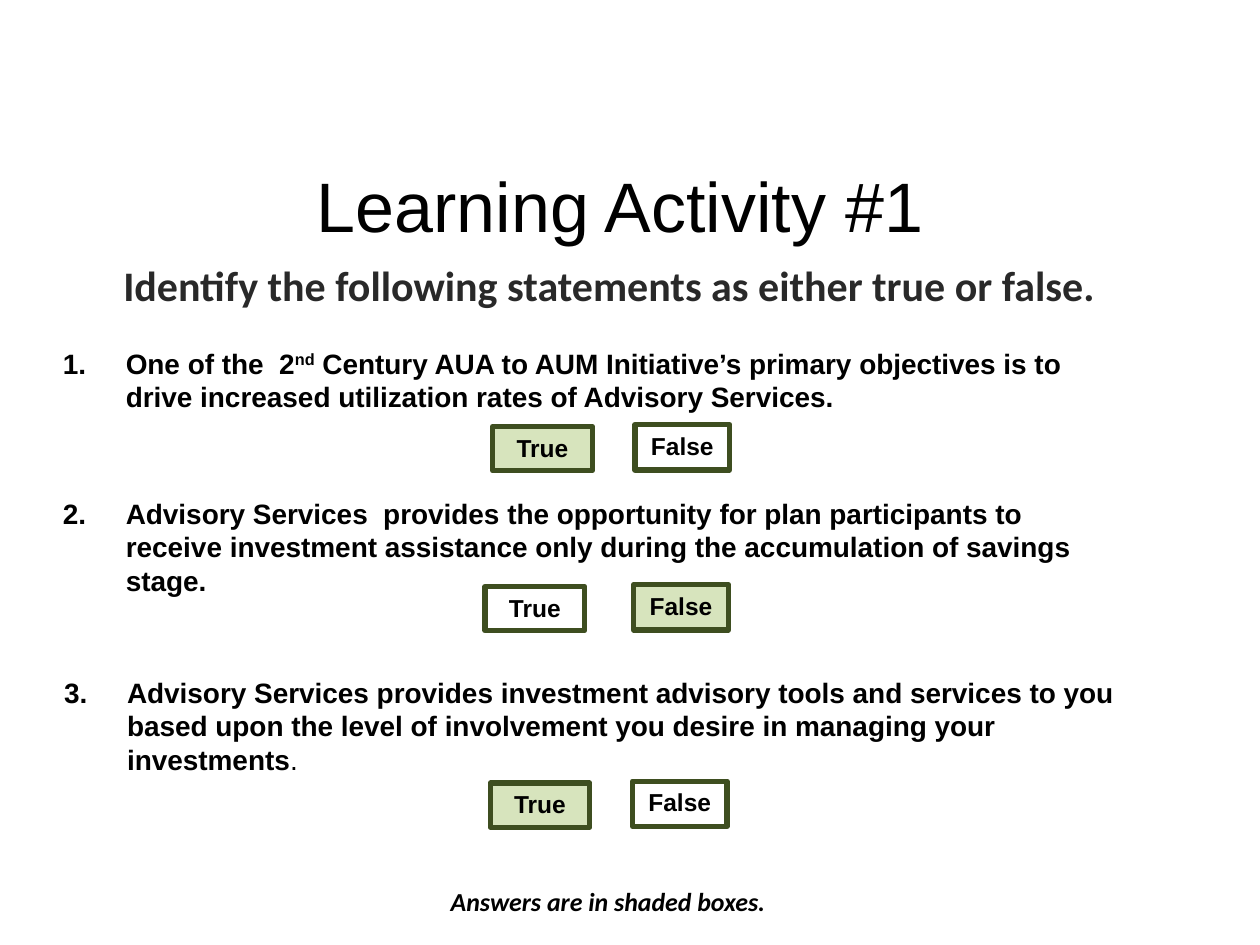
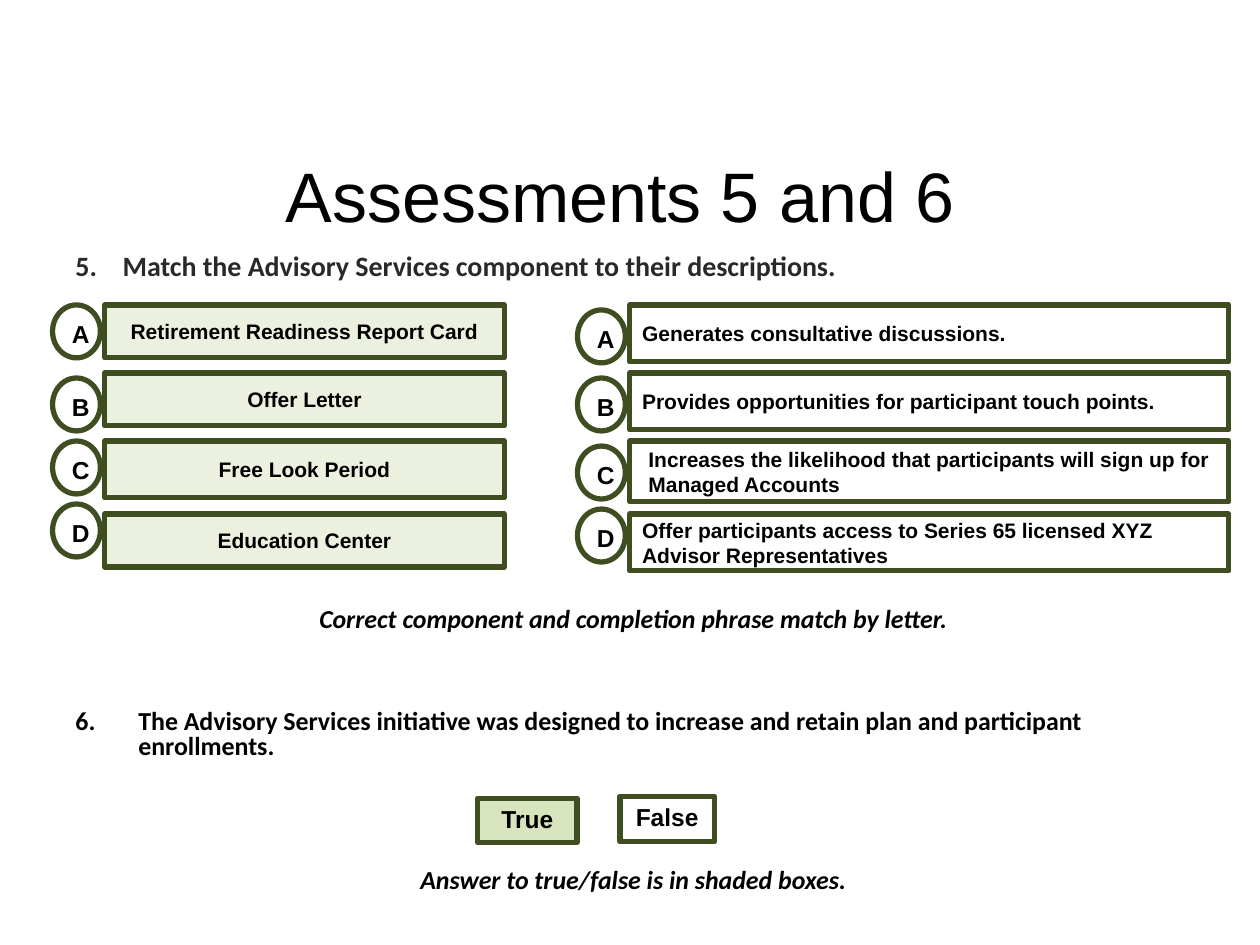
from dataclasses import dataclass

from lxml.etree import SubElement
from pptx import Presentation
from pptx.dml.color import RGBColor
from pptx.enum.shapes import MSO_SHAPE as Preset
from pptx.enum.text import MSO_ANCHOR as Anchor, PP_ALIGN as Align
from pptx.oxml.ns import qn
from pptx.util import Inches, Pt

COLUMNS, ROWS = 100, 75
WIDTH, HEIGHT = Inches(10), Inches(7.5)
COLUMN, ROW = WIDTH // COLUMNS, HEIGHT // ROWS

BLACK = RGBColor(0x00, 0x00, 0x00)
CHARCOAL = RGBColor(0x29, 0x29, 0x29)
OLIVE = RGBColor(0x3E, 0x4E, 0x20)
ANSWER_GREEN = RGBColor(0xD7, 0xE4, 0xBD)
COMPONENT_GREEN = RGBColor(0xEB, 0xF1, 0xDE)

BODY_WIDTH = 85.5
HANGING = 5
MATCH_ROWS = ((0, 4.2), (5.4, 4.2), (10.8, 4.5), (16.6, 4.2))
COMPONENTS = (
    "Retirement Readiness Report Card",
    "Offer Letter",
    "Free Look Period",
    "Education Center",
)
DESCRIPTIONS = (
    "Generates consultative discussions.",
    "Provides opportunities for participant touch points.",
    "Increases the likelihood that participants will sign up for Managed Accounts",
    "Offer participants access to Series 65 licensed XYZ Advisor Representatives",
)


@dataclass
class Box:
    left: float
    top: float
    width: float
    height: float

    def inner(self, left, top, width, height):
        return Box(self.left + left, self.top + top, width, height)

    def lengths(self):
        return (round(self.left * COLUMN), round(self.top * ROW),
                round(self.width * COLUMN), round(self.height * ROW))


def write(shape, text, size=14, font="Arial", color=BLACK, bold=True, italic=False,
          align=Align.LEFT, anchor=Anchor.TOP, hanging=0, indent=0, number=None,
          line_spacing=None):
    frame = shape.text_frame
    frame.word_wrap = True
    frame.vertical_anchor = anchor
    paragraph = frame.paragraphs[0]
    paragraph.alignment = align
    if line_spacing:
        paragraph.line_spacing = line_spacing
    properties = paragraph._p.get_or_add_pPr()
    if hanging or indent:
        properties.set("marL", str(round((hanging + indent) * COLUMN)))
        properties.set("indent", str(-round(hanging * COLUMN)))
    if number:
        SubElement(properties, qn("a:buAutoNum"), type="arabicPeriod", startAt=str(number))
    runs = [(text, {})] if isinstance(text, str) else text
    for words, changes in runs:
        run = paragraph.add_run()
        run.text = words
        run.font.size = Pt(size)
        run.font.name = font
        run.font.color.rgb = color
        run.font.bold = changes.get("bold", bold)
        run.font.italic = italic
        if "baseline" in changes:
            run._r.get_or_add_rPr().set("baseline", changes["baseline"])


def add_text(slide, box, text, **style):
    write(slide.shapes.add_textbox(*box.lengths()), text, **style)


def add_outlined(slide, preset, box, text, fill=None, **style):
    shape = slide.shapes.add_shape(preset, *box.lengths())
    shape.shadow.inherit = False
    if fill is None:
        shape.fill.background()
    else:
        shape.fill.solid()
        shape.fill.fore_color.rgb = fill
    shape.line.color.rgb = OLIVE
    shape.line.width = Pt(3)
    write(shape, text, **style)


def add_title(slide, top, text):
    add_text(slide, Box(4.2, top, 90, 12.5), text, size=40, bold=False,
             align=Align.CENTER, anchor=Anchor.MIDDLE)


def add_answer_note(slide, left, top, text):
    add_text(slide, Box(left, top, BODY_WIDTH, 3.3), text, size=14.8, font="Calibri",
             italic=True, align=Align.CENTER, hanging=HANGING, line_spacing=0.9)


def add_true_false(slide, box, answer):
    buttons = (
        ("True", box.inner(0, 0.15, 7.9, 3.5)),
        ("False", box.inner(box.width - 7.5, 0, 7.5, box.height)),
    )
    for label, button in buttons:
        add_outlined(slide, Preset.ACTION_BUTTON_CUSTOM, button, label,
                     fill=ANSWER_GREEN if label == answer else None, align=Align.CENTER)


def add_statement(slide, box, number, text, choices, answer):
    add_text(slide, box, text, size=16, hanging=HANGING, number=number)
    add_true_false(slide, choices, answer)


def add_match_column(slide, box, entries, badge_tops, extra_height=0, fill=None,
                     align=Align.LEFT, indents=(0, 0, 0, 0)):
    label_left = 4.15
    rows = zip("ABCD", entries, MATCH_ROWS, badge_tops, indents)
    for letter, entry, (top, height), badge_top, indent in rows:
        label = box.inner(label_left, top, box.width - label_left, height + extra_height)
        add_outlined(slide, Preset.ACTION_BUTTON_CUSTOM, label, entry, fill=fill, size=12,
                     align=align, anchor=Anchor.MIDDLE, indent=indent)
        add_outlined(slide, Preset.OVAL, box.inner(0, badge_top, 3.8, 4.2), letter,
                     align=Align.CENTER)


def build_learning_activity(slide):
    add_title(slide, 10, "Learning Activity #1")
    add_text(slide, Box(8.8, 20.1, BODY_WIDTH, 4.2),
             "Identify the following statements as either true or false.",
             size=24, font="Calibri", color=CHARCOAL, hanging=HANGING)
    statements = (
        (Box(4, 27, BODY_WIDTH, 12.9), Box(39.1, 33.7, 18.8, 3.6), "True", [
            ("One of the  2", {}),
            ("nd", {"baseline": "30000"}),
            (" Century AUA to AUM Initiative’s primary objectives is to drive increased "
             "utilization rates of Advisory Services.", {}),
        ]),
        (Box(4, 38.9, BODY_WIDTH, 14.2), Box(38.5, 46.4, 19.3, 3.6), "False",
         "Advisory Services  provides the opportunity for plan participants to receive "
         "investment assistance only during the accumulation of savings stage."),
        (Box(4.1, 53.1, BODY_WIDTH, 14.2), Box(38.9, 62, 18.8, 3.6), "True", [
            ("Advisory Services provides investment advisory tools and services to you based "
             "upon the level of involvement you desire in managing your investments", {}),
            (".", {"bold": False}),
        ]),
    )
    for number, (box, choices, answer, text) in enumerate(statements, 1):
        add_statement(slide, box, number, text, choices, answer)
    add_answer_note(slide, 5.5, 70.1, "Answers are in shaded boxes.")


def build_assessments(slide):
    add_title(slide, 9.2, "Assessments 5 and 6")
    add_text(slide, Box(5, 19.2, 89.9, 6.7),
             "Match the Advisory Services component to their descriptions.",
             size=16, font="Calibri", color=CHARCOAL, hanging=3.75, number=5)
    add_match_column(slide, Box(4.17, 24.2, 35.85, 20.8), COMPONENTS, (0, 5.8, 10.8, 15.8),
                     fill=COMPONENT_GREEN, align=Align.CENTER)
    add_match_column(slide, Box(45.83, 24.2, 51.7, 21.1), DESCRIPTIONS, (0.4, 5.8, 11.2, 16.2),
                     extra_height=0.3, indents=(0, 0, 0.5, 0))
    add_answer_note(slide, 7.5, 47.6, "Correct component and completion phrase match by letter.")
    add_text(slide, Box(5, 55.9, BODY_WIDTH, 5),
             "The Advisory Services initiative was designed to increase and retain plan and "
             "participant enrollments.",
             size=14.8, font="Calibri", hanging=HANGING, number=6, line_spacing=0.8)
    add_true_false(slide, Box(37.9, 63.2, 18.8, 3.6), "True")
    add_answer_note(slide, 7.5, 68.3, "Answer to true/false is in shaded boxes.")


def main():
    presentation = Presentation()
    presentation.slide_width, presentation.slide_height = WIDTH, HEIGHT
    blank = presentation.slide_layouts[6]
    for build in (build_learning_activity, build_assessments):
        build(presentation.slides.add_slide(blank))
    presentation.save("out.pptx")


if __name__ == "__main__":
    main()
